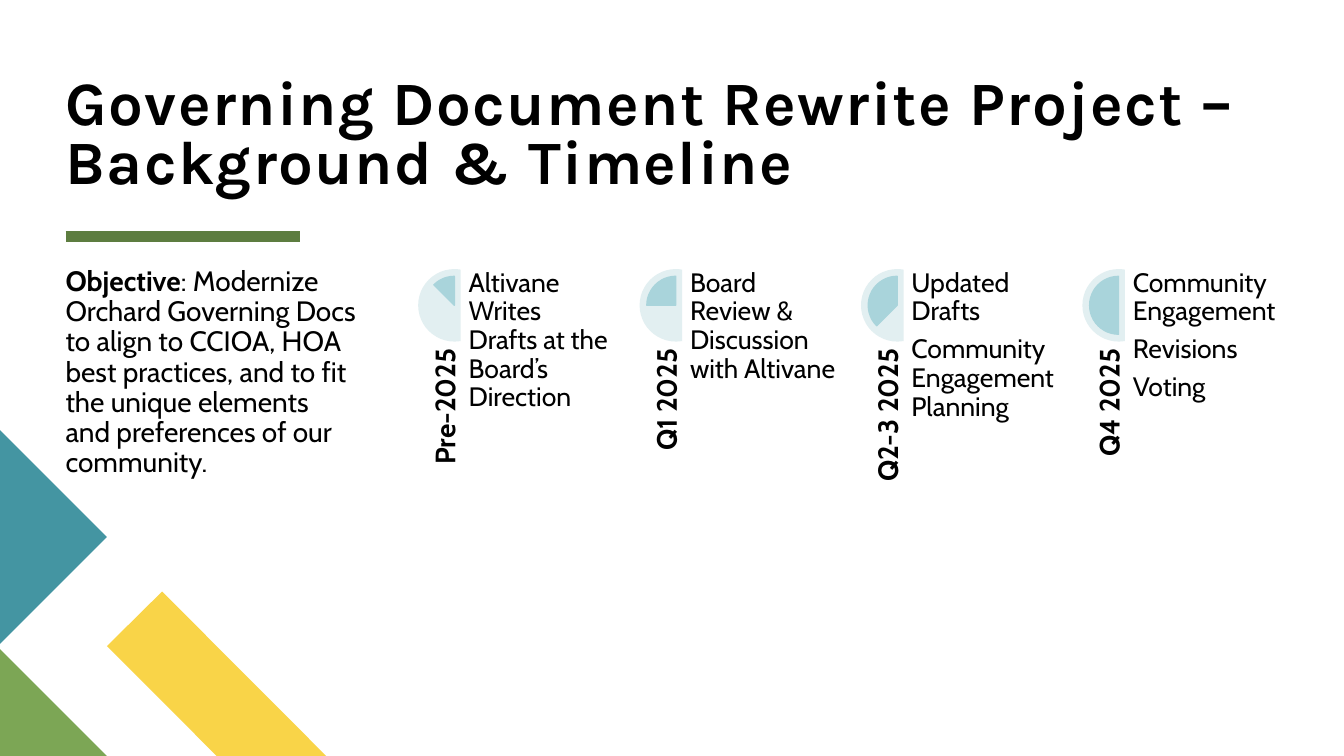
from lxml import etree
from pptx import Presentation
from pptx import util as u
from pptx.dml import color
from pptx.enum import shapes, text
from pptx.oxml import ns


def rgb(value):
    return color.RGBColor.from_string(value)


class TimelineSlide:
    ink = "000000"
    heading_font = "Karla"
    body_font = "Cabin"

    def __init__(self, slide):
        self.shapes = slide.shapes

    def paint(self, shape, fill, outline=None):
        shape.shadow.inherit = False
        shape.fill.solid()
        shape.fill.fore_color.rgb = rgb(fill)
        if outline:
            shape.line.color.rgb = rgb(outline)
            shape.line.width = u.Pt(1)
        else:
            shape.line.fill.background()

    def polygon(self, corners, fill):
        points = [(u.Pt(x), u.Pt(y)) for x, y in corners]
        builder = self.shapes.build_freeform(*points[0])
        builder.add_line_segments(points[1:], close=True)
        self.paint(builder.convert_to_shape(), fill)

    def rule(self, x1, y1, x2, y2, line, width):
        rule = self.shapes.add_connector(
            shapes.MSO_CONNECTOR.STRAIGHT, *map(u.Pt, (x1, y1, x2, y2)))
        rule.line.color.rgb = rgb(line)
        rule.line.width = u.Pt(width)
        etree.SubElement(rule._element.spPr, ns.qn("a:effectLst"))

    def arc(self, kind, x, y, size, start, end, fill, outline=None):
        """Draw a pie or chord between two angles in degrees."""
        arc = self.shapes.add_shape(kind, *map(u.Pt, (x, y, size, size)))
        # Angles are stored in 1/60000 degree, adjustments in units of 100000
        arc.adjustments[0] = start * 0.6
        arc.adjustments[1] = end * 0.6
        self.paint(arc, fill, outline)

    def label(self, box, paragraphs, size, font=body_font, bold=False,
              line_spacing=0.9, before=0, after=0, top=0, tracking=0,
              anchor=text.MSO_ANCHOR.TOP, align=text.PP_ALIGN.LEFT, rotation=0):
        holder = self.shapes.add_textbox(*map(u.Pt, box))
        holder.rotation = rotation
        frame = holder.text_frame
        frame.word_wrap = True
        frame.vertical_anchor = anchor
        frame.margin_left = frame.margin_right = frame.margin_bottom = 0
        frame.margin_top = u.Pt(top)
        frame.text = "\n".join(paragraphs)
        for paragraph in frame.paragraphs:
            paragraph.alignment = align
            paragraph.line_spacing = line_spacing
            paragraph.space_before = u.Pt(before)
            paragraph.space_after = u.Pt(after)
            for run in paragraph.runs:
                self.style(run, size, font, bold, tracking)
        return frame

    def style(self, run, size, font=body_font, bold=False, tracking=0):
        run.font.size = u.Pt(size)
        run.font.name = font
        run.font.bold = bold
        run.font.color.rgb = rgb(self.ink)
        if tracking:
            run._r.get_or_add_rPr().set("spc", str(tracking * 100))

    def milestone(self, x, y, date, steps, start):
        """One timeline stage: half dial, upright date and its steps."""
        self.arc(shapes.MSO_SHAPE.CHORD, x, y, 51.8, 80, 280, "E2EFF1")
        self.arc(shapes.MSO_SHAPE.PIE, x + 5.2, y + 5.2, 41.3, start, 270,
                 "A9D4DB", "A9D4DB")
        self.label((x - 59.5, y + 116, 149.8, 31), [date], 20, bold=True,
                   after=7, anchor=text.MSO_ANCHOR.BOTTOM,
                   align=text.PP_ALIGN.RIGHT, rotation=270)
        self.label((x + 36.1, y, 103.7, 206.6), steps, 19, after=6.65)


def main():
    deck = Presentation()
    deck.slide_width, deck.slide_height = u.Pt(960), u.Pt(540)
    page = TimelineSlide(deck.slides.add_slide(deck.slide_layouts[6]))

    # Corner decoration and accent rule
    page.rule(46.8, 169.2, 214.6, 169.2, "5D7D40", 8)
    page.polygon([(233, 540), (154.8, 540), (76.4, 461.5), (115.8, 422.5)],
                 "F9D448")
    page.polygon([(76.4, 540), (0, 540), (0, 463.6)], "7CA655")
    page.polygon([(0, 307.2), (76.4, 383.6), (0, 460)], "4495A2")

    # Title
    page.label((46.8, 7.9, 856.1, 132.5),
               ["Governing Document Rewrite Project – Background & Timeline"],
               44, page.heading_font, bold=True, line_spacing=0.8,
               tracking=1, anchor=text.MSO_ANCHOR.BOTTOM)

    # Timeline: the dial fills by 45 degrees at each stage
    stages = [
        ("Pre-2025", ["Altivane Writes Drafts at the Board’s Direction"]),
        ("Q1 2025", ["Board Review & Discussion with Altivane"]),
        ("Q2-3 2025", ["Updated Drafts", "Community Engagement Planning"]),
        ("Q4 2025", ["Community Engagement", "Revisions", "Voting"]),
    ]
    for index, (date, steps) in enumerate(stages):
        page.milestone(298.7 + 158.15 * index, 192.2, date, steps,
                       225 - 45 * index)

    # Objective
    objective = page.label((46.8, 172.8, 208.1, 291.6), ["Objective"], 20,
                           bold=True, before=18, top=18)
    goal = objective.paragraphs[0].add_run()
    goal.text = (": Modernize Orchard Governing Docs to align to CCIOA, HOA "
                 "best practices, and to fit the unique elements and "
                 "preferences of our community.")
    page.style(goal, 20)

    deck.save("out.pptx")


if __name__ == "__main__":
    main()
